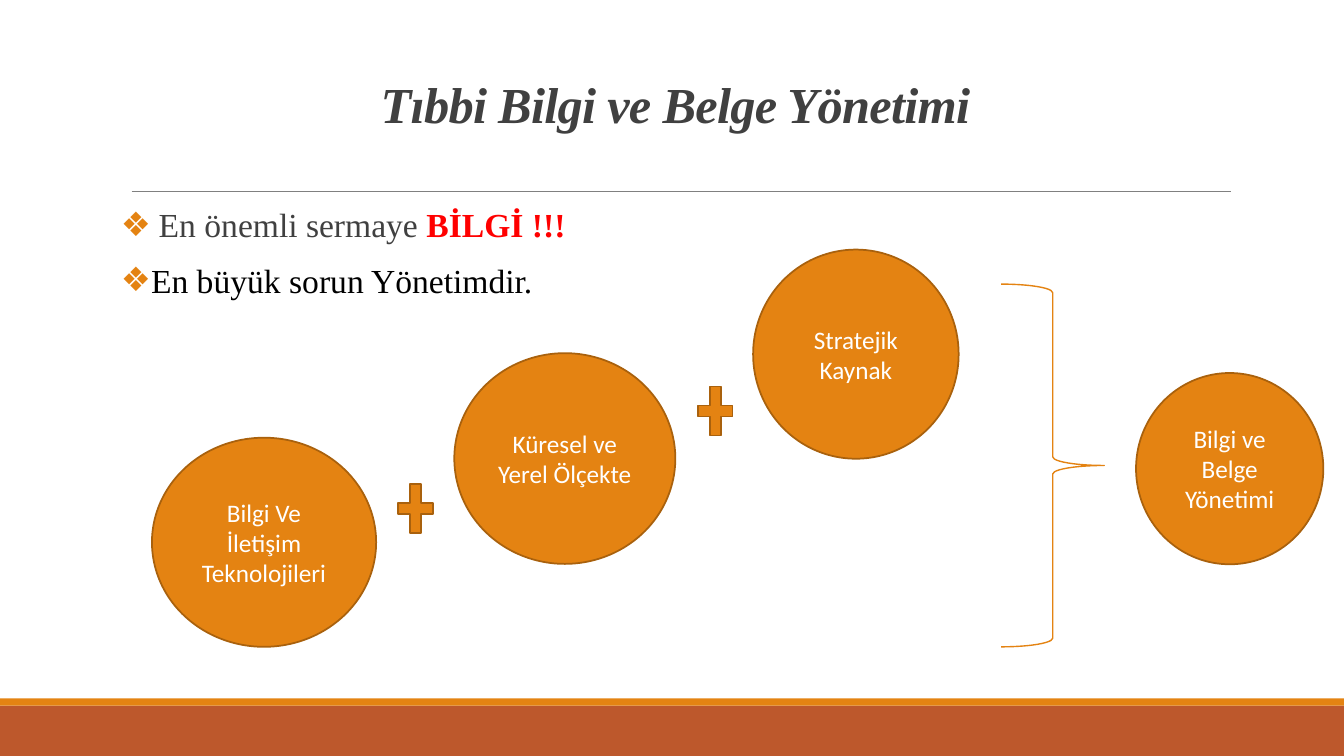
from lxml import etree
from pptx import Presentation
from pptx.dml.color import RGBColor
from pptx.enum import shapes, text
from pptx.oxml.ns import qn
from pptx.util import Cm, Pt

WHITE = RGBColor(0xFF, 0xFF, 0xFF)
BLACK = RGBColor(0, 0, 0)
DARK = RGBColor(0x40, 0x40, 0x40)
GRAY = RGBColor(0x80, 0x80, 0x80)
RED = RGBColor(0xFF, 0, 0)
ORANGE = RGBColor(0xE4, 0x83, 0x12)
BROWN = RGBColor(0xA9, 0x61, 0x0D)
RUST = RGBColor(0xBD, 0x58, 0x2C)
SERIF, SANS = "Times New Roman", "Calibri"
KIND = shapes.MSO_SHAPE


def style(font, name, size, color):
    """Set the face, size and colour of a font."""
    font.name, font.size = name, Pt(size)
    font.color.rgb = color


def add_form(slide, kind, box, fill=None, line=None, width=1.25):
    """Add a flat preset shape in a box given in centimetres."""
    form = slide.shapes.add_shape(kind, *map(Cm, box))
    form.shadow.inherit = False
    if fill is None:
        form.fill.background()
    else:
        form.fill.solid()
        form.fill.fore_color.rgb = fill
    if line is None:
        form.line.fill.background()
    else:
        form.line.color.rgb = line
        form.line.width = Pt(width)
    return form


def add_frame(slide, box):
    """Draw the footer bands and the rule under the title."""
    left, top, width, high = box
    base = top + high
    add_form(slide, KIND.RECTANGLE, (left, base - 1.27, width, 1.27), RUST)
    add_form(slide, KIND.RECTANGLE, (left, base - 1.45, width, 0.18), ORANGE)
    rule = slide.shapes.add_connector(
        shapes.MSO_CONNECTOR.STRAIGHT,
        Cm(left + 3.32), Cm(top + 4.82), Cm(left + 31.01), Cm(top + 4.82))
    rule.line.color.rgb = GRAY
    rule.line.width = Pt(0.5)
    etree.SubElement(rule._element.spPr, qn("a:effectLst"))


def add_title(slide, box):
    """Fill and format the title placeholder."""
    title = slide.shapes.title
    title.left, title.top, title.width, title.height = map(Cm, box)
    frame = title.text_frame
    frame.text = "Tıbbi Bilgi ve Belge Yönetimi"
    frame.vertical_anchor = text.MSO_ANCHOR.BOTTOM
    para = frame.paragraphs[0]
    para.alignment = text.PP_ALIGN.CENTER
    para.line_spacing = 0.85
    style(para.font, SERIF, 36, DARK)
    para.font.bold = para.font.italic = True
    para.runs[0]._r.get_or_add_rPr().set("spc", "-50")


def add_mark(para, size, indent):
    """Give a paragraph a hanging orange diamond bullet."""
    props = para._p.get_or_add_pPr()
    props.set("marL", str(Cm(indent)))
    props.set("indent", str(-Cm(indent)))
    color = etree.SubElement(props, qn("a:buClr"))
    etree.SubElement(color, qn("a:srgbClr"), val=str(ORANGE))
    etree.SubElement(props, qn("a:buSzPts"), val=str(size * 100))
    etree.SubElement(props, qn("a:buFont"), typeface=SANS)
    etree.SubElement(props, qn("a:buChar"), char="❖")


def add_body(slide, box):
    """Write the two bulleted statements."""
    frame = slide.shapes.add_textbox(*map(Cm, box)).text_frame
    frame.word_wrap = True
    frame.margin_left = frame.margin_right = 0
    first, last = frame.paragraphs[0], frame.add_paragraph()
    last.space_before = Pt(12)
    for para, size, indent, color in (
            (first, 20, 0.95, DARK), (last, 24, 0.75, BLACK)):
        add_mark(para, size, indent)
        para.line_spacing = 0.9
        para.space_after = Pt(2)
        style(para.font, SERIF, 24, color)
    first.add_run().text = "En önemli sermaye "
    key = first.add_run()
    key.text = "BİLGİ !!!"
    key.font.bold = True
    key.font.color.rgb = RED
    last.add_run().text = "En büyük sorun Yönetimdir."


def add_disc(slide, label, box):
    """Add a labelled orange ellipse."""
    frame = add_form(slide, KIND.OVAL, box, ORANGE, BROWN).text_frame
    frame.text = label
    frame.word_wrap = True
    frame.vertical_anchor = text.MSO_ANCHOR.MIDDLE
    para = frame.paragraphs[0]
    para.alignment = text.PP_ALIGN.CENTER
    style(para.font, SANS, 18, WHITE)


def add_sum(slide, box):
    """Draw the rising discs, plus signs, brace and resulting disc."""
    left, top = box[:2]
    for label, x, y, width, high in (
            ("Bilgi Ve İletişim Teknolojileri", 0, 4.74, 5.65, 5.27),
            ("Küresel ve Yerel Ölçekte", 7.62, 2.61, 5.57, 5.31),
            ("Stratejik Kaynak", 15.15, 0, 5.18, 5.27),
            ("Bilgi ve Belge Yönetimi", 24.8, 3.11, 4.72, 4.82)):
        add_disc(slide, label, (left + x, top + y, width, high))
    for x, y in ((6.05, 5.69), (13.6, 3.23)):
        add_form(slide, KIND.MATH_PLUS, (left + x, top + y, 1.19, 1.68),
                 ORANGE, BROWN)
    add_form(slide, KIND.RIGHT_BRACE, (left + 21.4, top + 0.87, 2.6, 9.14),
             line=ORANGE, width=1)


def main():
    """Build and save the slide."""
    deck = Presentation()
    deck.slide_width, deck.slide_height = Cm(33.87), Cm(19.05)
    slide = deck.slides.add_slide(deck.slide_layouts[5])
    add_frame(slide, (0, 0, 33.87, 19.05))
    add_title(slide, (3.05, 0.79, 27.94, 2.72))
    add_body(slide, (3.05, 5.13, 27.94, 11.18))
    add_sum(slide, (3.83, 6.29, 29.52, 10.01))
    deck.save("out.pptx")


if __name__ == "__main__":
    main()
